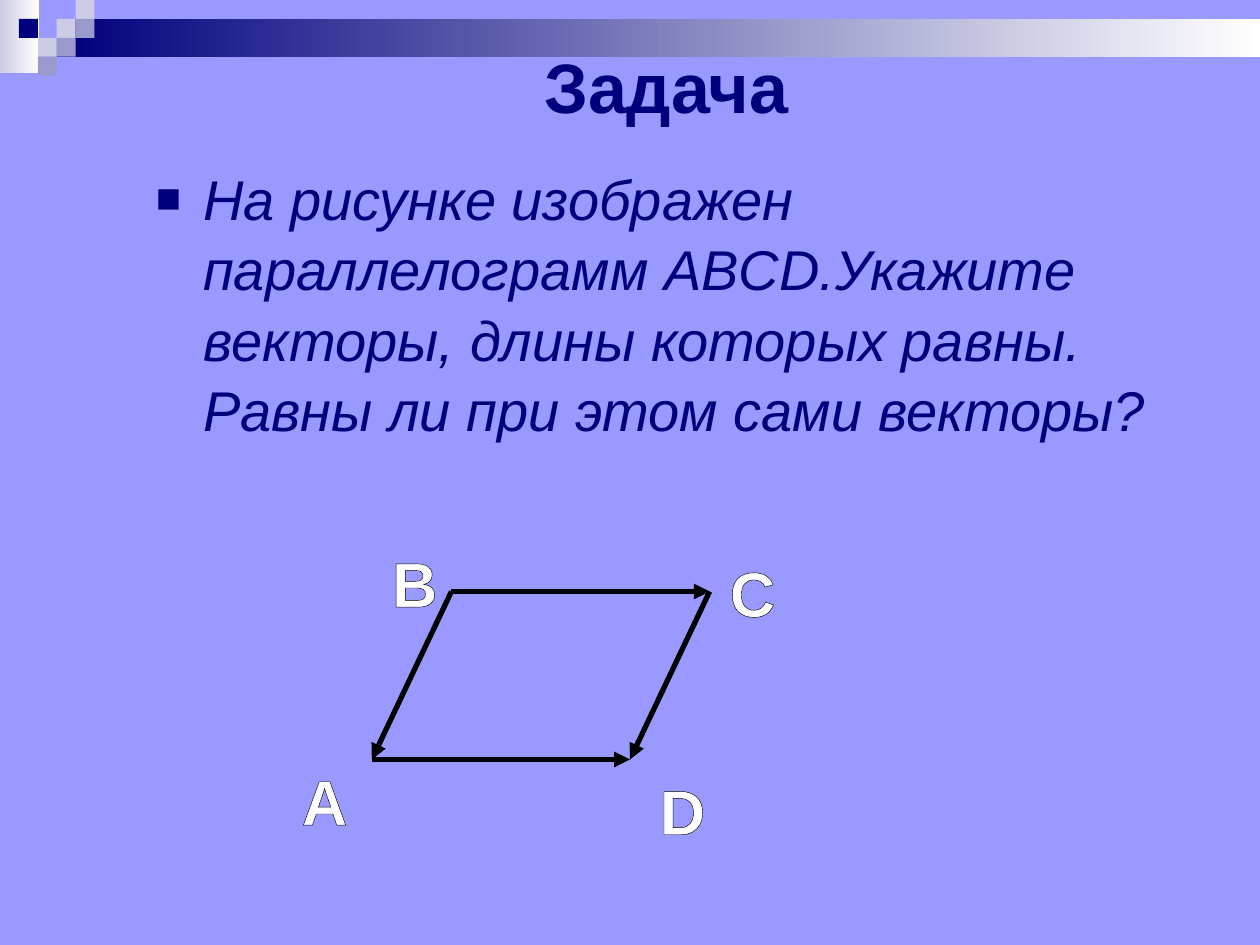
from lxml import etree
from pptx import Presentation
from pptx.dml.color import RGBColor
from pptx.enum import shapes, text
from pptx.oxml import parse_xml
from pptx.oxml.ns import nsdecls, qn
from pptx.util import Pt

COLORS = {
    "background": "9999FF",
    "navy": "00007D",
    "pale": "CCCCE6",
    "muted": "9999CC",
    "white": "FFFFFF",
    "black": "000000",
}
rgb = {name: RGBColor.from_string(value) for name, value in COLORS.items()}


def add_block(left, top, width, height, color, fade=False):
    """Add a borderless rectangle, optionally fading to white on the right."""
    block = page.shapes.add_shape(
        shapes.MSO_SHAPE.RECTANGLE, Pt(left), Pt(top), Pt(width), Pt(height))
    block.shadow.inherit = False
    block.line.fill.background()
    if fade:
        block.fill.gradient()
        block.fill.gradient_angle = 0
        for stop, position, shade in zip(block.fill.gradient_stops, (0, 1), (color, "white")):
            stop.position = position
            stop.color.rgb = rgb[shade]
    else:
        block.fill.solid()
        block.fill.fore_color.rgb = rgb[color]


def style_span(span, size, color):
    span.font.name = "Arial"
    span.font.size = Pt(size)
    span.font.color.rgb = rgb[color]


deck = Presentation()
deck.slide_width, deck.slide_height = Pt(720), Pt(540)
page = deck.slides.add_slide(deck.slide_layouts[5])
page.background.fill.solid()
page.background.fill.fore_color.rgb = rgb["background"]

# Header band and its checkered corner
add_block(0, 0, 22.3, 41.8, "pale", fade=True)
add_block(32.4, 10.8, 687.6, 21.6, "navy", fade=True)
SQUARE = 10.8
for column, row, color in [
    (3, 1, "pale"), (4, 0, "pale"), (4, 1, "muted"), (2, 2, "pale"),
    (1, 1, "navy"), (3, 2, "muted"), (2, 3, "muted"),
]:
    add_block(column * SQUARE, row * SQUARE, SQUARE, SQUARE, color)

# Title
title = page.shapes.title
title.left, title.top, title.width, title.height = Pt(48), Pt(15), Pt(505.5), Pt(67.5)
frame = title.text_frame
frame.text = "Задача"
frame.margin_left = Pt(263)
frame.vertical_anchor = text.MSO_ANCHOR.MIDDLE
para = frame.paragraphs[0]
para.alignment = text.PP_ALIGN.LEFT
style_span(para.runs[0], 40, "navy")
para.runs[0].font.bold = True

# Problem statement
body = page.shapes.add_textbox(Pt(82), Pt(88.5), Pt(601.5), Pt(451.5))
frame = body.text_frame
frame.word_wrap = True
frame.text = ("На рисунке изображен параллелограмм ABCD.Укажите векторы, "
              "длины которых равны. Равны ли при этом сами векторы?")
para = frame.paragraphs[0]
para.line_spacing = 1.05
style_span(para.runs[0], 32, "navy")
para.runs[0].font.italic = True
props = para._p.get_or_add_pPr()
props.set("marL", str(Pt(27)))
props.set("indent", str(-Pt(27)))
bullet_color = etree.SubElement(props, qn("a:buClr"))
etree.SubElement(bullet_color, qn("a:srgbClr"), val=COLORS["navy"])
etree.SubElement(props, qn("a:buSzPct"), val="75000")
etree.SubElement(props, qn("a:buFont"), typeface="Arial")
etree.SubElement(props, qn("a:buChar"), char="■")

# Parallelogram vectors
corners = {"A": (212.5, 434), "B": (258, 338), "C": (405.5, 338), "D": (360, 434)}
for start, end in ("AD", "BC", "BA", "CD"):
    vector = page.shapes.add_connector(
        shapes.MSO_CONNECTOR.STRAIGHT, *map(Pt, corners[start] + corners[end]))
    vector.line.color.rgb = rgb["black"]
    vector.line.width = Pt(3)
    etree.SubElement(vector.line._get_or_add_ln(), qn("a:tailEnd"), type="triangle")
    etree.SubElement(vector._element.spPr, qn("a:effectLst"))

# Outlined corner letters
for letter, left, top in [
    ("B", 224, 304), ("C", 417, 309.5), ("A", 172.5, 428.5), ("D", 377, 434),
]:
    label = page.shapes.add_textbox(Pt(left), Pt(top), Pt(23), Pt(31))
    frame = label.text_frame
    frame.word_wrap = False
    frame.margin_left = frame.margin_right = frame.margin_bottom = 0
    frame.margin_top = Pt(7)
    frame.text = letter
    para = frame.paragraphs[0]
    para.alignment = text.PP_ALIGN.CENTER
    span = para.runs[0]
    style_span(span, 36, "white")
    span.font.bold = True
    span.font._element.insert(0, parse_xml(
        f'<a:ln {nsdecls("a")} w="{Pt(1.75)}"><a:solidFill>'
        f'<a:srgbClr val="{COLORS["black"]}"/></a:solidFill></a:ln>'))

deck.save("out.pptx")
